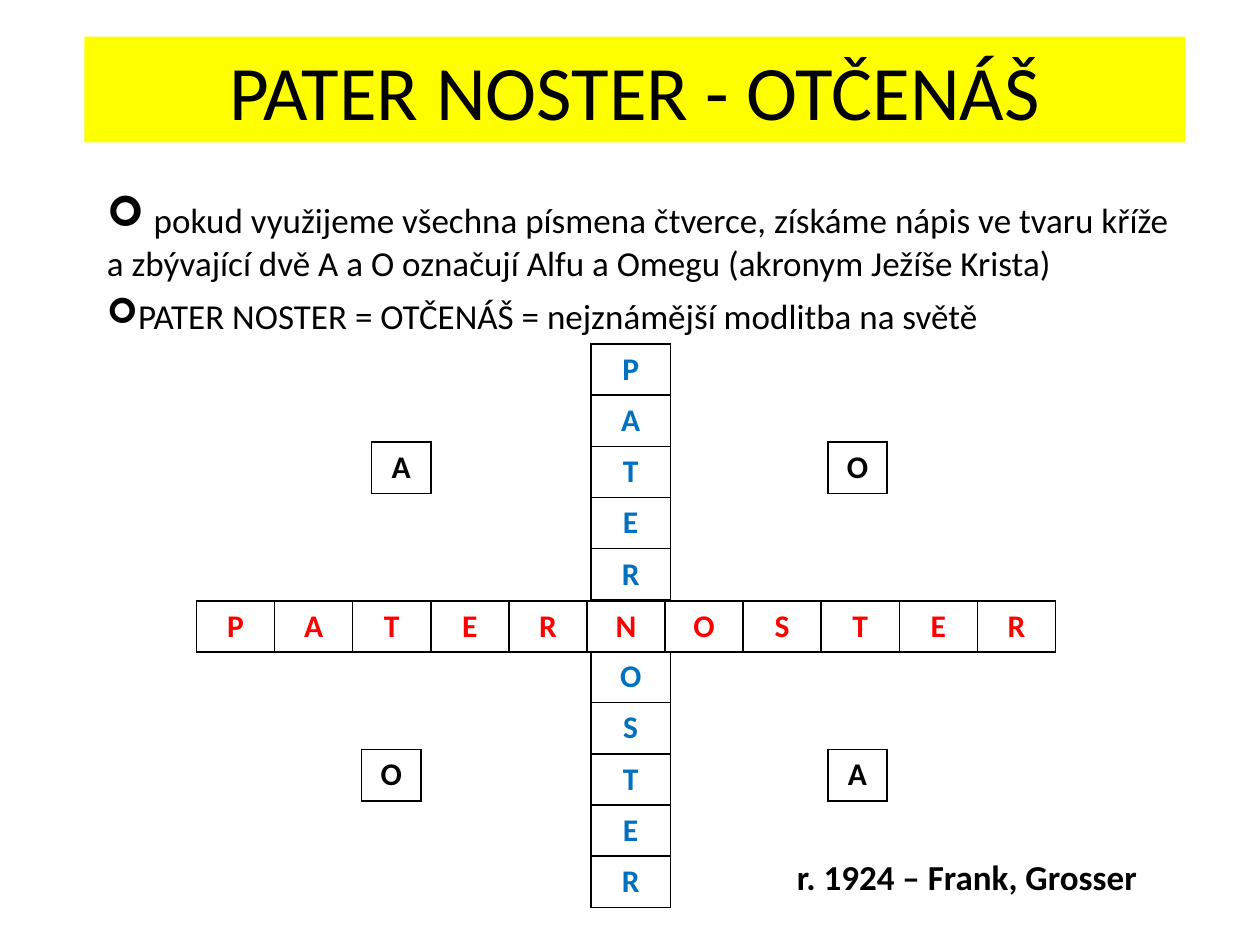
from lxml.etree import SubElement
from pptx import Presentation
from pptx.dml.color import RGBColor
from pptx.enum.shapes import MSO_SHAPE
from pptx.enum.text import MSO_ANCHOR, MSO_AUTO_SIZE, PP_ALIGN
from pptx.oxml.ns import qn
from pptx.util import Inches, Pt

BLACK = RGBColor(0x00, 0x00, 0x00)
YELLOW = RGBColor(0xFF, 0xFF, 0x00)
RED = RGBColor(0xFF, 0x00, 0x00)
BLUE = RGBColor(0x00, 0x70, 0xC0)

FONT = "Calibri"
SLIDE_WIDTH = Inches(10)
SLIDE_HEIGHT = Inches(7.5)
ROW_SHARE = 5.42
ARM_TOP = 63.6
STEM_LEFT = 46.9


def across(percent):
    return round(SLIDE_WIDTH * percent / 100)


def down(percent):
    return round(SLIDE_HEIGHT * percent / 100)


def area(left, top, width, height):
    return across(left), down(top), across(width), down(height)


def add_run(paragraph, words, size, color=BLACK, bold=False):
    run = paragraph.add_run()
    run.text = words
    run.font.name = FONT
    run.font.size = Pt(size)
    run.font.bold = bold
    run.font.color.rgb = color


def prepare_frame(frame):
    frame.word_wrap = True
    frame.auto_size = MSO_AUTO_SIZE.SHAPE_TO_FIT_TEXT
    return frame.paragraphs[0]


def add_heading(slide, words):
    banner = slide.shapes.add_shape(MSO_SHAPE.RECTANGLE, *area(6.7, 3.87, 87.4, 11.2))
    banner.shadow.inherit = False
    banner.fill.solid()
    banner.fill.fore_color.rgb = YELLOW
    banner.line.fill.background()
    heading = prepare_frame(banner.text_frame)
    heading.alignment = PP_ALIGN.CENTER
    add_run(heading, words, 44)


def add_arrow_bullet(paragraph):
    paragraph.space_after = Pt(6)
    properties = paragraph._p.get_or_add_pPr()
    SubElement(properties, qn("a:buFont"), typeface="Wingdings")
    SubElement(properties, qn("a:buChar"), char="➢")


def add_explanation(slide, points):
    frame = slide.shapes.add_textbox(*area(7.5, 19.6, 87.4, 16.8)).text_frame
    first = prepare_frame(frame)
    for index, runs in enumerate(points):
        point = frame.add_paragraph() if index else first
        add_arrow_bullet(point)
        for words, size in runs:
            add_run(point, words, size)


def add_borders(cell):
    properties = cell._tc.get_or_add_tcPr()
    for position, side in enumerate(("lnL", "lnR", "lnT", "lnB")):
        border = properties.makeelement(qn(f"a:{side}"), {"w": str(Pt(1))})
        fill = SubElement(border, qn("a:solidFill"))
        SubElement(fill, qn("a:srgbClr"), val=str(BLACK))
        properties.insert(position, border)


def add_letters(slide, letters, left, top, cell_width, color, vertical=False):
    rows, columns = (len(letters), 1) if vertical else (1, len(letters))
    place = area(left, top, cell_width * columns, ROW_SHARE * rows)
    table = slide.shapes.add_table(rows, columns, *place).table
    table.first_row = False
    table.horz_banding = False
    for cell, letter in zip(table.iter_cells(), letters):
        cell.fill.background()
        cell.vertical_anchor = MSO_ANCHOR.TOP
        add_borders(cell)
        paragraph = cell.text_frame.paragraphs[0]
        paragraph.alignment = PP_ALIGN.CENTER
        add_run(paragraph, letter, 18, color, bold=True)


def add_cross(slide):
    add_letters(slide, "PATERNOSTER", 15.6, ARM_TOP, 6.2, RED)
    for word, top in (("PATER", 36.4), ("OSTER", 68.93)):
        add_letters(slide, word, STEM_LEFT, top, 6.3, BLUE, vertical=True)


def add_alpha_and_omega(slide):
    corners = (("A", 29.5, 46.8), ("O", 65.7, 46.8), ("A", 65.7, 79.33), ("O", 28.7, 79.33))
    for letter, left, top in corners:
        add_letters(slide, letter, left, top, 4.7, BLACK)


def add_credit(slide, words):
    frame = slide.shapes.add_textbox(*area(60.2, 89.87, 33.1, 5.87)).text_frame
    credit = prepare_frame(frame)
    credit.alignment = PP_ALIGN.CENTER
    add_run(credit, words, 20, bold=True)


def main():
    presentation = Presentation()
    presentation.slide_width = SLIDE_WIDTH
    presentation.slide_height = SLIDE_HEIGHT
    slide = presentation.slides.add_slide(presentation.slide_layouts[6])
    add_heading(slide, "PATER NOSTER - OTČENÁŠ")
    add_explanation(slide, (
        ((" ", 24), ("pokud využijeme všechna písmena čtverce, získáme nápis ve tvaru kříže "
                     "a zbývající dvě A a O označují Alfu a Omegu (akronym Ježíše Krista)", 20)),
        (("PATER NOSTER = OTČENÁŠ = nejznámější modlitba na světě", 20),),
    ))
    add_cross(slide)
    add_alpha_and_omega(slide)
    add_credit(slide, "r. 1924 – Frank, Grosser")
    presentation.save("out.pptx")


if __name__ == "__main__":
    main()
